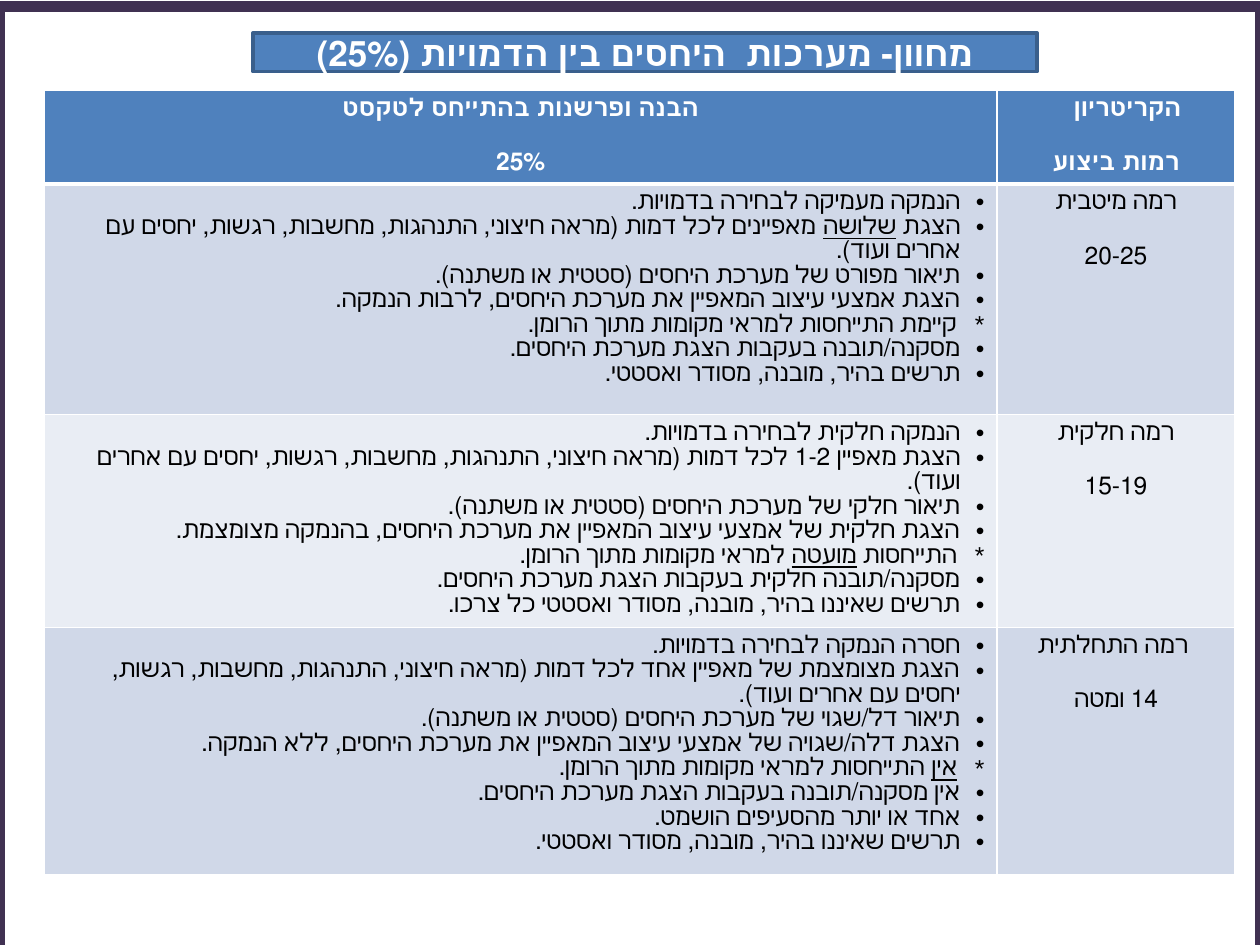
from dataclasses import dataclass

from lxml import etree
from pptx import Presentation
from pptx.dml.color import RGBColor
from pptx.enum.shapes import MSO_SHAPE
from pptx.enum.text import MSO_ANCHOR, MSO_AUTO_SIZE, PP_ALIGN
from pptx.oxml.ns import qn
from pptx.util import Pt

RECT = MSO_SHAPE.RECTANGLE
MIDDLE = MSO_ANCHOR.MIDDLE
NO_FIT = MSO_AUTO_SIZE.NONE
CENTER, RIGHT = PP_ALIGN.CENTER, PP_ALIGN.RIGHT

BLUE, WHITE, BLACK = "4F81BD", "FFFFFF", "000000"
HANG = {"•": 13.5, "*": 15.5}
GAP = 17
HEAD_FMT = {"size": Pt(14), "name": "Calibri", "bold": True}
BODY_FMT = {"size": Pt(14), "name": "Calibri", "bold": False}
TITLE_FMT = {"size": Pt(20), "name": "Arial", "bold": True}


@dataclass
class Level:
    name: str
    score: str
    height: float
    fill: str
    items: list[str]


LEVELS = [
    Level("רמה מיטבית", "20-25", 131.8, "D0D8E8", [
        "הנמקה מעמיקה לבחירה בדמויות.",
        "הצגת _שלושה_ מאפיינים לכל דמות (מראה חיצוני, התנהגות, מחשבות, רגשות, יחסים עם אחרים ועוד).",
        "תיאור מפורט של מערכת היחסים (סטטית או משתנה).",
        "הצגת אמצעי עיצוב המאפיין את מערכת היחסים, לרבות הנמקה.",
        "*קיימת התייחסות למראי מקומות מתוך הרומן.",
        "מסקנה/תובנה בעקבות הצגת מערכת היחסים.",
        "תרשים בהיר, מובנה, מסודר ואסטטי.",
    ]),
    Level("רמה חלקית", "15-19", 121.7, "E9EDF4", [
        "הנמקה חלקית לבחירה בדמויות.",
        "הצגת מאפיין 1-2 לכל דמות (מראה חיצוני, התנהגות, מחשבות, רגשות, יחסים עם אחרים ועוד).",
        "תיאור חלקי של מערכת היחסים (סטטית או משתנה).",
        "הצגת חלקית של אמצעי עיצוב המאפיין את מערכת היחסים, בהנמקה מצומצמת.",
        "*התייחסות _מועטה_ למראי מקומות מתוך הרומן.",
        "מסקנה/תובנה חלקית בעקבות הצגת מערכת היחסים.",
        "תרשים שאיננו בהיר, מובנה, מסודר ואסטטי כל צרכו.",
    ]),
    Level(" רמה התחלתית", "14 ומטה", 141.1, "D0D8E8", [
        "חסרה הנמקה לבחירה בדמויות.",
        "הצגת מצומצמת של מאפיין אחד לכל דמות (מראה חיצוני, התנהגות, מחשבות, רגשות, יחסים עם אחרים ועוד).",
        "תיאור דל/שגוי של מערכת היחסים (סטטית או משתנה).",
        "הצגת דלה/שגויה של אמצעי עיצוב המאפיין את מערכת היחסים, ללא הנמקה.",
        "*_אין_ התייחסות למראי מקומות מתוך הרומן.",
        "אין מסקנה/תובנה בעקבות הצגת מערכת היחסים.",
        "אחד או יותר מהסעיפים הושמט.",
        "תרשים שאיננו בהיר, מובנה, מסודר ואסטטי.",
    ]),
]


def rgb(color: str) -> RGBColor:
    return RGBColor.from_string(color)


def write(p, text: str, fmt: dict, color: str, align=CENTER) -> None:
    p.alignment = align
    p._p.get_or_add_pPr().set("rtl", "1")
    for i, part in enumerate(text.split("_")):
        if not part:
            continue
        r = p.add_run()
        r.text = part
        for key, value in fmt.items():
            setattr(r.font, key, value)
        r.font.color.rgb = rgb(color)
        if i % 2:
            r.font.underline = True


def indent(p, margin: float, first: float = 0) -> None:
    pPr = p._p.get_or_add_pPr()
    pPr.set("marL", str(Pt(margin)))
    pPr.set("indent", str(Pt(first)))


def style_cell(cell, fill: str, bottom: float = 1) -> None:
    tcPr = cell._tc.get_or_add_tcPr()
    for side, width in {"L": 1, "R": 1, "T": 1, "B": bottom}.items():
        ln = etree.SubElement(tcPr, qn(f"a:ln{side}"), w=str(Pt(width)))
        solid = etree.SubElement(ln, qn("a:solidFill"))
        etree.SubElement(solid, qn("a:srgbClr"), val=WHITE)
    cell.fill.solid()
    cell.fill.fore_color.rgb = rgb(fill)


def add_pair(cell, top: str, bottom: str, fmt: dict, color: str):
    tf = cell.text_frame
    first, second = tf.paragraphs[0], tf.add_paragraph()
    for p, text in ((first, top), (second, bottom)):
        write(p, text, fmt, color)
        p.line_spacing = Pt(14)
    second.space_before = Pt(GAP)
    return first


def add_items(cell, items: list[str]) -> None:
    tf = cell.text_frame
    for i, item in enumerate(items):
        p = tf.add_paragraph() if i else tf.paragraphs[0]
        bullet = "*" if item.startswith("*") else "•"
        write(p, item.lstrip("*"), BODY_FMT, BLACK, RIGHT)
        p.line_spacing = Pt(14)
        indent(p, HANG[bullet], -HANG[bullet])
        pPr = p._p.get_or_add_pPr()
        etree.SubElement(pPr, qn("a:buFont"), typeface="Arial")
        etree.SubElement(pPr, qn("a:buChar"), char=bullet)


def add_title(slide) -> None:
    sp = slide.shapes.title
    box = {"left": 144.7, "top": 18.7, "width": 447.8, "height": 22.3}
    for key, value in box.items():
        setattr(sp, key, Pt(value))
    sp.fill.solid()
    sp.fill.fore_color.rgb = rgb(BLUE)
    sp.line.color.rgb = rgb("3A5F8C")
    sp.line.width = Pt(2)
    tf = sp.text_frame
    tf.auto_size = NO_FIT
    tf.vertical_anchor = MIDDLE
    write(tf.paragraphs[0], "מחוון- מערכות  היחסים בין הדמויות (25%)", TITLE_FMT, WHITE)


def add_rubric(slide) -> None:
    heights = [53.3] + [level.height for level in LEVELS]
    frame = slide.shapes.add_table(len(heights), 2, Pt(25.4), Pt(51.8), Pt(680.4), Pt(sum(heights)))
    table = frame.table
    for col, width in zip(table.columns, (544.3, 136.1)):
        col.width = Pt(width)
    for row, height in zip(table.rows, heights):
        row.height = Pt(height)
    for col in range(2):
        style_cell(table.cell(0, col), BLUE, 3)
    add_pair(table.cell(0, 0), "הבנה ופרשנות בהתייחס לטקסט", "25%", HEAD_FMT, WHITE)
    criterion = add_pair(table.cell(0, 1), "הקריטריון", "רמות ביצוע", HEAD_FMT, WHITE)
    criterion.alignment = RIGHT
    indent(criterion, 23.5)
    for i, level in enumerate(LEVELS, 1):
        items, name = table.cell(i, 0), table.cell(i, 1)
        style_cell(items, level.fill)
        style_cell(name, level.fill)
        add_items(items, level.items)
        add_pair(name, level.name, level.score, BODY_FMT, BLACK)


def add_border(slide) -> None:
    sp = slide.shapes.add_shape(RECT, 0, Pt(3.6), Pt(720), Pt(539.3))
    sp.shadow.inherit = False
    sp.fill.background()
    sp.line.color.rgb = rgb("403152")
    sp.line.width = Pt(6)


def main() -> None:
    prs = Presentation()
    prs.slide_width, prs.slide_height = Pt(720), Pt(540)
    slide = prs.slides.add_slide(prs.slide_layouts[5])
    add_title(slide)
    add_rubric(slide)
    add_border(slide)
    prs.save("out.pptx")


if __name__ == "__main__":
    main()
